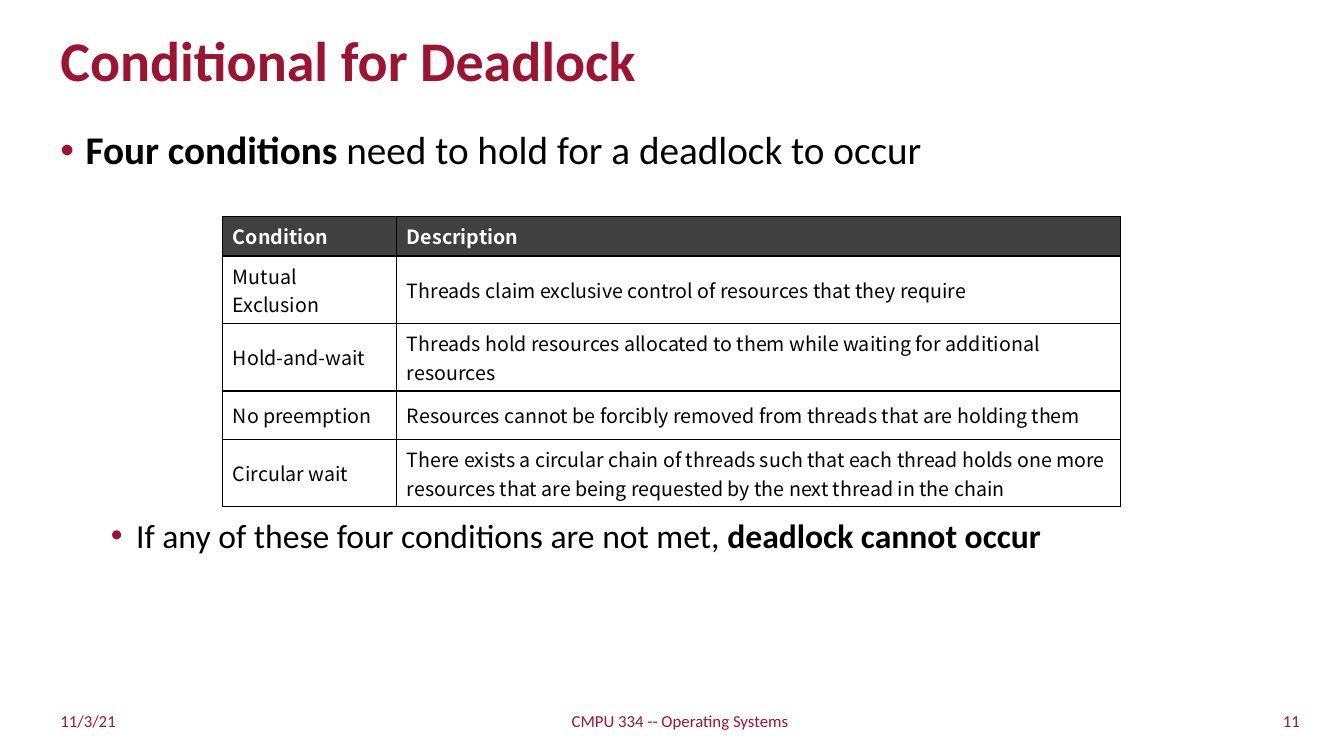
from lxml import etree
from pptx import Presentation, util as u
from pptx.dml.color import RGBColor
from pptx.enum import text
from pptx.oxml import ns

WIDTH, HEIGHT = 13.33, 7.5
MARGIN = 0.5
CRIMSON, BLACK, WHITE, CHARCOAL = "9C1431", "000000", "FFFFFF", "404040"
ALIGN = text.PP_ALIGN
MIDDLE = text.MSO_ANCHOR.MIDDLE

CONDITIONS = [
    ("Condition", "Description"),
    ("Mutual Exclusion", "Threads claim exclusive control of resources that they require"),
    ("Hold-and-wait", "Threads hold resources allocated to them while waiting for additional resources"),
    ("No preemption", "Resources cannot be forcibly removed from threads that are holding them"),
    ("Circular wait", "There exists a circular chain of threads such that each thread holds one more "
                      "resources that are being requested by the next thread in the chain"),
]
ROW_HEIGHTS = [0.39, 0.67, 0.67, 0.48, 0.67]
COLUMN_SHARES = [0.194, 0.806]


def colour(code):
    return RGBColor.from_string(code)


def place(shape, box):
    shape.left, shape.top, shape.width, shape.height = (u.Inches(length) for length in box)


def add_span(para, words, size, code, bold=False, font="Calibri"):
    span = para.add_run()
    span.text = words
    span.font.size = u.Pt(size)
    span.font.name = font
    span.font.bold = bold
    span.font.color.rgb = colour(code)


def add_bullet(para, indent):
    props = para._p.get_or_add_pPr()
    props.set("marL", str(u.Inches(indent)))
    props.set("indent", str(-u.Inches(0.25)))
    tint = etree.SubElement(props, ns.qn("a:buClr"))
    etree.SubElement(tint, ns.qn("a:srgbClr"), val=CRIMSON)
    etree.SubElement(props, ns.qn("a:buFont"), typeface="Arial")
    etree.SubElement(props, ns.qn("a:buChar"), char="•")


def add_title(page, box):
    title = page.shapes.title
    place(title, box)
    frame = title.text_frame
    frame.auto_size = text.MSO_AUTO_SIZE.NONE
    frame.vertical_anchor = MIDDLE
    para = frame.paragraphs[0]
    para.alignment = ALIGN.LEFT
    para.line_spacing = 0.9
    add_span(para, "Conditional for Deadlock", 40, CRIMSON, True)


def add_body(page, box):
    body = page.placeholders[1]
    place(body, box)
    frame = body.text_frame
    frame.auto_size = text.MSO_AUTO_SIZE.NONE
    points = [
        (0, 28, 0, [("Four conditions", True), (" need to hold for a deadlock to occur", False)]),
        (1, 24, 247, [("If any of these four conditions are not met, ", False),
                      ("deadlock cannot occur", True)]),
    ]
    for number, (level, size, gap, spans) in enumerate(points):
        para = frame.add_paragraph() if number else frame.paragraphs[0]
        para.level = level
        para.line_spacing = 0.9
        para.space_before = u.Pt(gap)
        add_bullet(para, 0.25 + 0.5 * level)
        for words, bold in spans:
            add_span(para, words, size, BLACK, bold)


def add_borders(cell):
    props = cell._tc.get_or_add_tcPr()
    for position, side in enumerate(("lnL", "lnR", "lnT", "lnB")):
        line = etree.Element(ns.qn("a:" + side), w=str(u.Pt(1)))
        fill = etree.SubElement(line, ns.qn("a:solidFill"))
        etree.SubElement(fill, ns.qn("a:srgbClr"), val=BLACK)
        props.insert(position, line)


def add_conditions(page, box):
    frame = page.shapes.add_table(len(CONDITIONS), len(COLUMN_SHARES),
                                  *(u.Inches(length) for length in box))
    table = frame.table
    for column, share in zip(table.columns, COLUMN_SHARES):
        column.width = u.Inches(box[2] * share)
    for number, (row, height) in enumerate(zip(table.rows, ROW_HEIGHTS)):
        row.height = u.Inches(height)
        header = number == 0
        for cell, words in zip(row.cells, CONDITIONS[number]):
            cell.vertical_anchor = MIDDLE
            cell.fill.solid()
            cell.fill.fore_color.rgb = colour(CHARCOAL if header else WHITE)
            add_borders(cell)
            add_span(cell.text_frame.paragraphs[0], words, 14,
                     WHITE if header else BLACK, header, "Noto Sans CJK KR")


def add_footer(page, box):
    left, top, width, height = box
    side, centre = width * 0.305, width * 0.365
    parts = [
        ("11/3/21", left, side, ALIGN.LEFT),
        ("CMPU 334 -- Operating Systems", left + (width - centre) / 2, centre, ALIGN.CENTER),
        ("11", left + width - side, side, ALIGN.RIGHT),
    ]
    for words, start, span_width, align in parts:
        label = page.shapes.add_textbox(0, 0, 0, 0)
        place(label, (start, top, span_width, height))
        frame = label.text_frame
        frame.word_wrap = True
        frame.vertical_anchor = MIDDLE
        para = frame.paragraphs[0]
        para.alignment = align
        add_span(para, words, 12, CRIMSON)


def main():
    deck = Presentation()
    deck.slide_width, deck.slide_height = u.Inches(WIDTH), u.Inches(HEIGHT)
    page = deck.slides.add_slide(deck.slide_layouts[1])
    content = WIDTH - 2 * MARGIN
    add_title(page, (MARGIN, 0.25, 11.45, 0.75))
    add_body(page, (MARGIN, 1.25, content, 5.45))
    add_conditions(page, (2.21, 2.15, 8.9, sum(ROW_HEIGHTS)))
    add_footer(page, (MARGIN, 6.95, content + 0.16, 0.4))
    deck.save("out.pptx")


if __name__ == "__main__":
    main()
